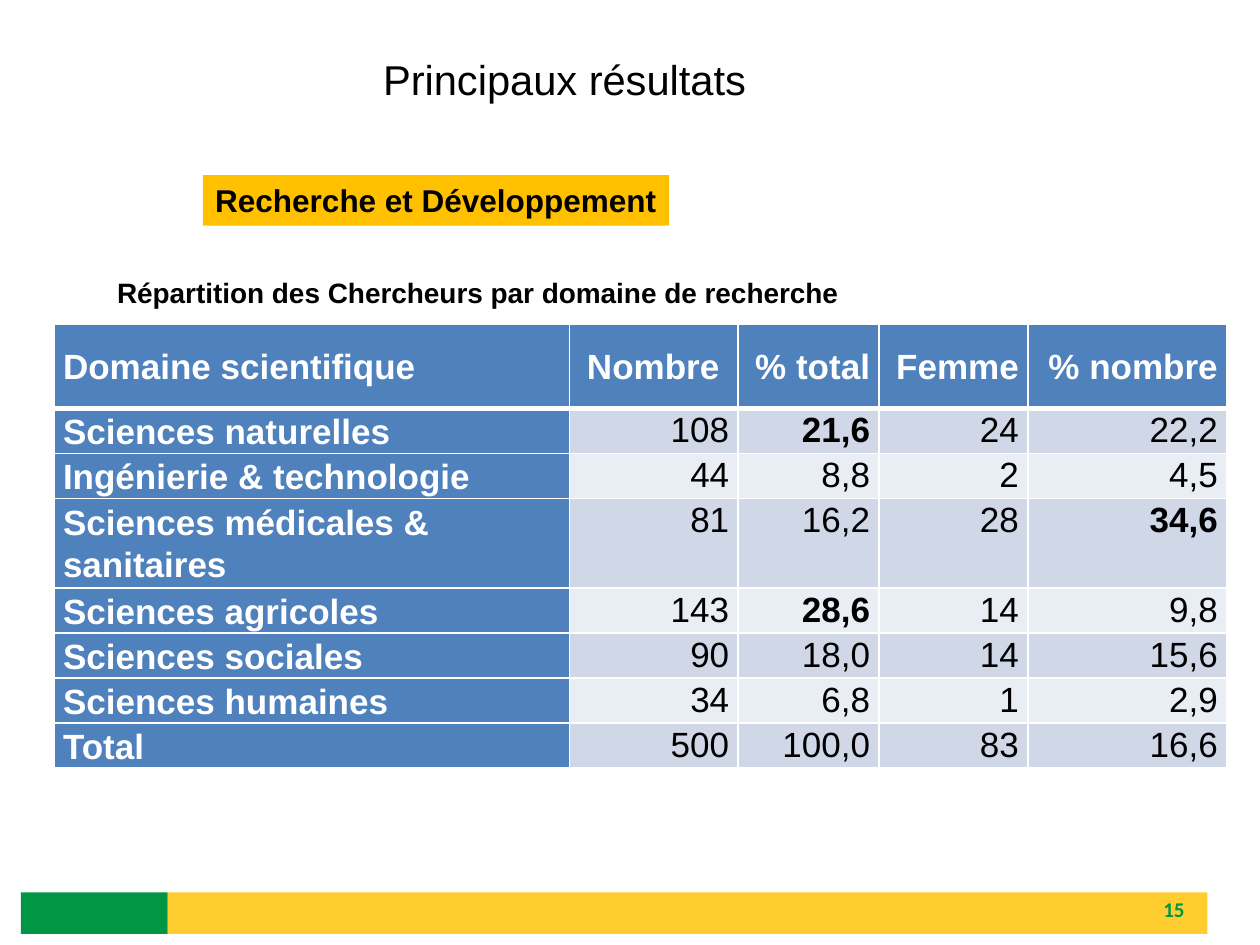
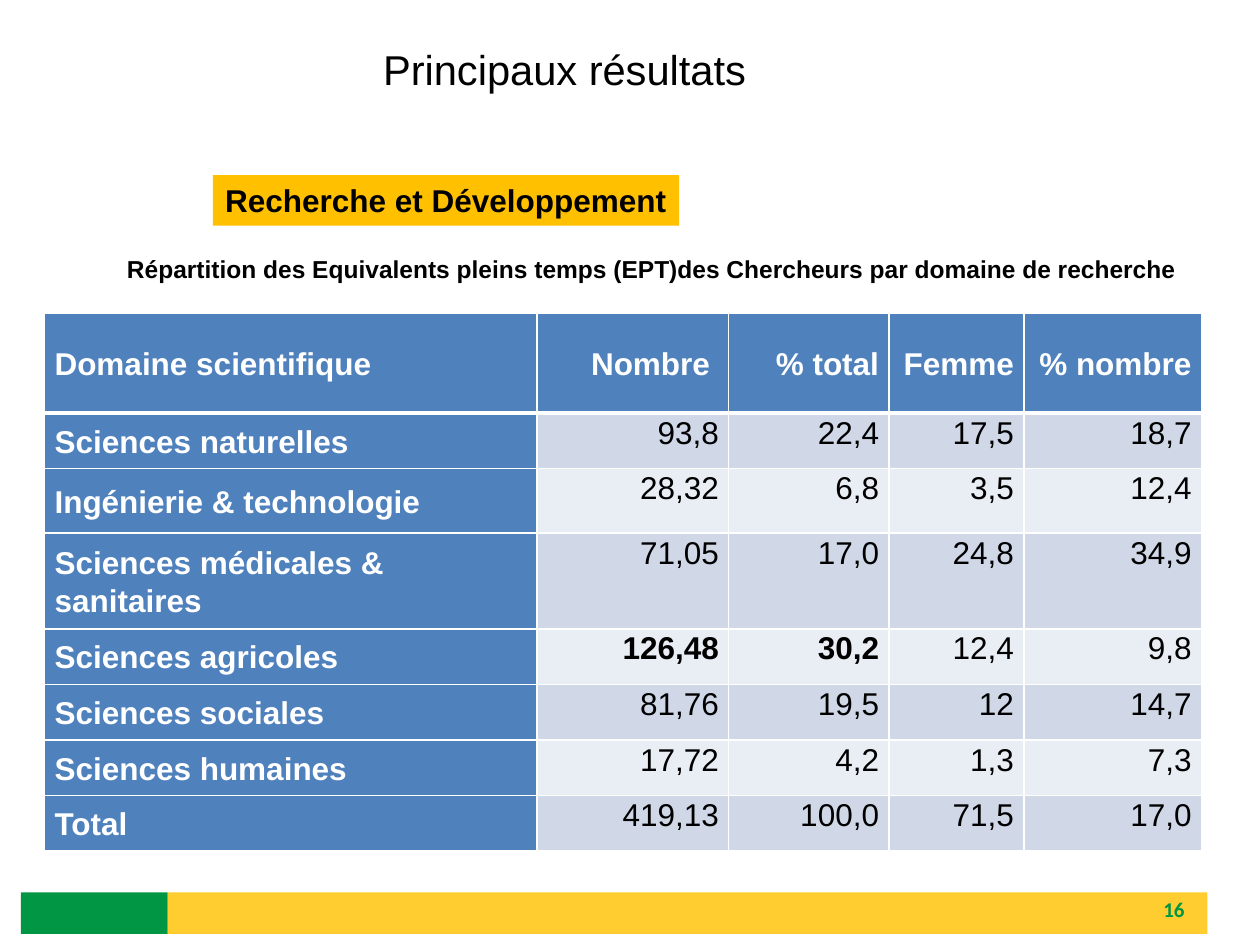
from lxml import etree
from pptx import Presentation
from pptx.dml.color import RGBColor
from pptx.enum.shapes import MSO_SHAPE
from pptx.enum.text import MSO_ANCHOR, MSO_AUTO_SIZE, PP_ALIGN
from pptx.oxml.ns import qn
from pptx.util import Cm, Pt

RECT = MSO_SHAPE.RECTANGLE
TOP, MIDDLE, BOTTOM = MSO_ANCHOR.TOP, MSO_ANCHOR.MIDDLE, MSO_ANCHOR.BOTTOM
LEFT, CENTER, RIGHT = PP_ALIGN.LEFT, PP_ALIGN.CENTER, PP_ALIGN.RIGHT
NO_FIT, GROW = MSO_AUTO_SIZE.NONE, MSO_AUTO_SIZE.SHAPE_TO_FIT_TEXT

BLACK, WHITE = "000000", "FFFFFF"
GREEN, YELLOW, AMBER = "009644", "FFCD2F", "FFC000"
BLUE, ODD, EVEN = "4F81BD", "D0D8E8", "E9EDF4"

HEAD = ["Domaine scientifique", "Nombre ", "% total", "Femme", "% nombre"]
FIELDS = ["Sciences naturelles", "Ingénierie & technologie",
          "Sciences médicales & sanitaires", "Sciences agricoles",
          "Sciences sociales", "Sciences humaines", "Total"]

# A leading star marks a figure set in bold.
STAFF = ["108 *21,6 24 22,2", "44 8,8 2 4,5", "81 16,2 28 *34,6",
         "143 *28,6 14 9,8", "90 18,0 14 15,6", "34 6,8 1 2,9",
         "500 100,0 83 16,6"]
FULL_TIME = ["93,8 22,4 17,5 18,7", "28,32 6,8 3,5 12,4",
             "71,05 17,0 24,8 34,9", "*126,48 *30,2 12,4 9,8",
             "81,76 19,5 12 14,7", "17,72 4,2 1,3 7,3",
             "419,13 100,0 71,5 17,0"]


def color(code):
    return RGBColor.from_string(code)


def edge(cell, side, width):
    """Draw one white border; sides go in the order L, R, T, B."""
    props = cell._tc.get_or_add_tcPr()
    line = etree.SubElement(props, qn("a:ln" + side), w=str(Pt(width)))
    fill = etree.SubElement(line, qn("a:solidFill"))
    etree.SubElement(fill, qn("a:srgbClr"), val=WHITE)


class Deck:
    def __init__(self):
        self.file = Presentation()
        self.file.slide_width, self.file.slide_height = Cm(25.4), Cm(19.05)
        self.slide = None

    def start(self, number):
        """Add a slide with its footer bands and page number."""
        layout = self.file.slide_layouts.get_by_name("Title Only")
        self.slide = self.file.slides.add_slide(layout)
        self.band(3.39, 17.99, 20.95, 0.84, YELLOW)
        self.band(0.42, 17.99, 2.96, 0.84, GREEN)
        box = self.label(str(number), 18.2, 17.99, 5.93, 0.69, 12, MIDDLE)
        self.style(box.text_frame.paragraphs[0], 12, GREEN, True, RIGHT, "Calibri")

    def style(self, para, size, tint=BLACK, bold=False, align=LEFT, face="Arial"):
        para.alignment = align
        for run in para.runs:
            font = run.font
            font.name, font.size, font.bold = face, Pt(size), bold
            font.color.rgb = color(tint)

    def band(self, x, y, wide, high, tint):
        shape = self.slide.shapes.add_shape(RECT, Cm(x), Cm(y), Cm(wide), Cm(high))
        shape.shadow.inherit = False
        shape.fill.solid()
        shape.fill.fore_color.rgb = color(tint)
        shape.line.fill.background()
        return shape

    def label(self, text, x, y, wide, high, size, anchor=BOTTOM):
        box = self.slide.shapes.add_textbox(Cm(x), Cm(y), Cm(wide), Cm(high))
        frame = box.text_frame
        frame.word_wrap, frame.vertical_anchor = True, anchor
        frame.text = text
        self.style(frame.paragraphs[0], size, bold=True)
        return box

    def title(self, text, y):
        shape = self.slide.shapes.title
        shape.left, shape.top, shape.width, shape.height = map(Cm, (5.08, y, 12.83, 0.99))
        frame = shape.text_frame
        frame.text = text
        frame.auto_size, frame.vertical_anchor = NO_FIT, TOP
        frame.margin_top = Cm(0.25)
        para = frame.paragraphs[0]
        para.line_spacing = 0.7
        self.style(para, 23.8, align=CENTER)

    def tag(self, text, x):
        frame = self.band(x, 3.53, 9.4, 1.02, AMBER).text_frame
        frame.text = text
        frame.word_wrap, frame.auto_size = False, GROW
        frame.vertical_anchor = TOP
        self.style(frame.paragraphs[0], 18, bold=True)

    def cell(self, cell, text, row, col, size, pad):
        main = row == 0 or col == 0
        cell.text = text.lstrip("*")
        cell.vertical_anchor = MIDDLE if main else TOP
        cell.margin_left = cell.margin_right = Cm(pad)
        cell.margin_top = cell.margin_bottom = 0
        para = cell.text_frame.paragraphs[0]
        para.line_spacing = 1.07
        self.style(para, size, WHITE if main else BLACK,
                   main or text.startswith("*"), RIGHT if col else LEFT)
        for side in "LR":
            edge(cell, side, 1)
        edge(cell, "T", 3 if row == 1 else 1)
        edge(cell, "B", 3 if row == 0 else 1)
        cell.fill.solid()
        cell.fill.fore_color.rgb = color(BLUE if main else ODD if row % 2 else EVEN)

    def table(self, data, x, y, cols, rows, size, pad):
        lines = [HEAD] + [[name] + line.split() for name, line in zip(FIELDS, data)]
        grid = self.slide.shapes.add_table(
            len(rows), len(cols), Cm(x), Cm(y), Cm(sum(cols)), Cm(sum(rows))).table
        for col, wide in zip(grid.columns, cols):
            col.width = Cm(wide)
        for row, high in zip(grid.rows, rows):
            row.height = Cm(high)
        for i, line in enumerate(lines):
            for j, text in enumerate(line):
                self.cell(grid.cell(i, j), text, i, j, size, pad)


def main():
    deck = Deck()
    topic, theme = "Principaux résultats ", "Recherche et Développement"

    deck.start(15)
    deck.title(topic, 1.12)
    deck.table(STAFF, 1.09, 6.53, [10.39, 3.4, 2.84, 3, 4.01],
               [1.7, 0.86, 0.86, 1.7] + [0.86] * 4, 20, 0.18)
    deck.label("Répartition des Chercheurs par domaine de recherche",
               2.11, 5.54, 21.9, 0.81, 16)
    deck.tag(theme, 4.09)

    deck.start(16)
    deck.title(topic, 0.91)
    deck.table(FULL_TIME, 0.9, 6.32, [9.93, 3.86, 3.23, 2.72, 3.58],
               [2.01, 1.12, 1.3, 1.93] + [1.12] * 4, 18, 0.2)
    deck.label("Répartition des Equivalents pleins temps (EPT)des Chercheurs "
               "par domaine de recherche", 2.31, 4.93, 22, 0.91, 14)
    deck.tag(theme, 4.29)

    deck.file.save("out.pptx")


if __name__ == "__main__":
    main()
